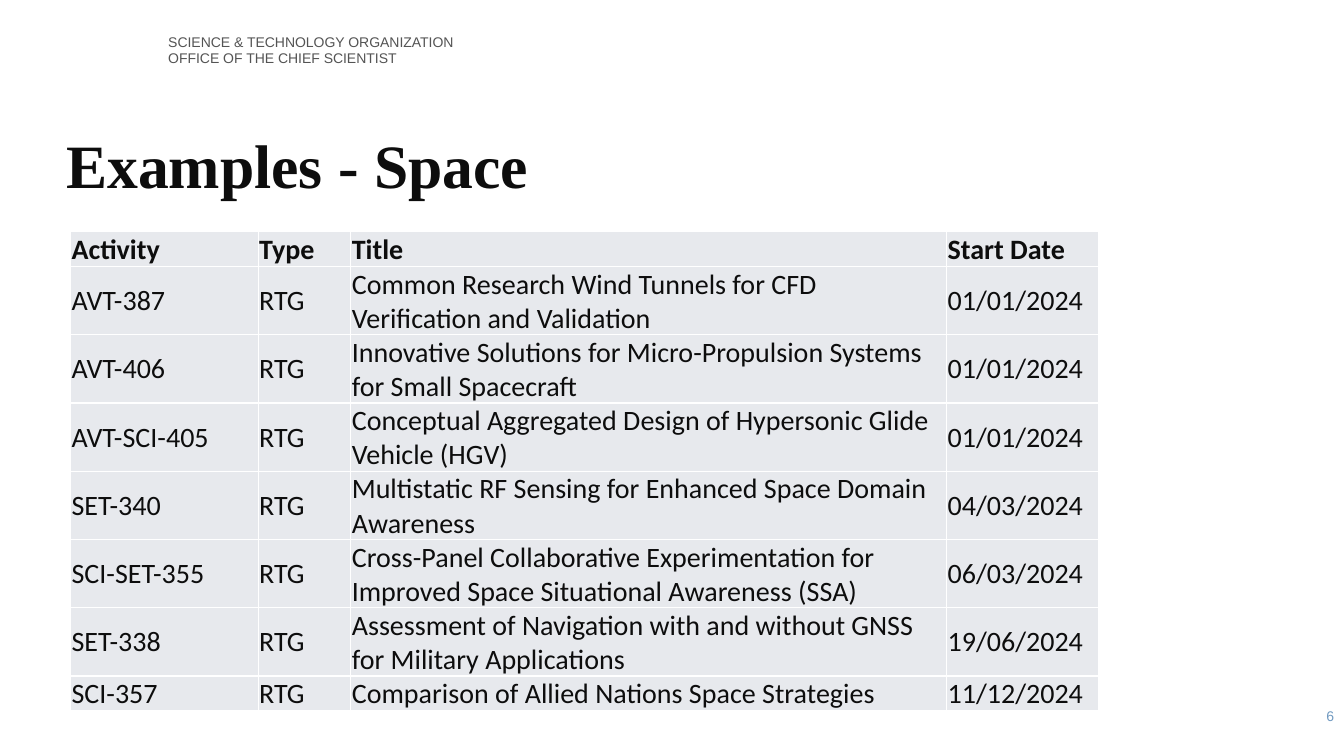
from lxml import etree
from pptx import Presentation
from pptx.dml.color import RGBColor
from pptx.enum import text
from pptx.oxml import ns
from pptx.util import Inches, Pt

INK = RGBColor(0x0D, 0x0D, 0x0D)
GREY = RGBColor(0x54, 0x54, 0x54)
BLUE = RGBColor(0x71, 0x9A, 0xC1)
CELL_FILL = RGBColor(0xE7, 0xE9, 0xED)
WHITE = RGBColor(0xFF, 0xFF, 0xFF)

COLUMN_WIDTHS = [1.86, 0.92, 5.91, 1.51]
LINE_HEIGHT = 0.33
HEADINGS = ["Activity", "Type", "Title", "Start Date"]
ACTIVITIES = [
    ("AVT-387", "Common Research Wind Tunnels for CFD Verification and Validation", "01/01/2024"),
    ("AVT-406", "Innovative Solutions for Micro-Propulsion Systems for Small Spacecraft", "01/01/2024"),
    ("AVT-SCI-405", "Conceptual Aggregated Design of Hypersonic Glide Vehicle (HGV)", "01/01/2024"),
    ("SET-340", "Multistatic RF Sensing for Enhanced Space Domain Awareness", "04/03/2024"),
    ("SCI-SET-355", "Cross-Panel Collaborative Experimentation for Improved Space Situational Awareness (SSA)",
     "06/03/2024"),
    ("SET-338", "Assessment of Navigation with and without GNSS for Military Applications", "19/06/2024"),
    ("SCI-357", "Comparison of Allied Nations Space Strategies", "11/12/2024"),
]


def add_run(paragraph, wording, font_name, size, color, bold=False):
    """Add one formatted run to a paragraph."""
    run = paragraph.add_run()
    run.text = wording
    run.font.name = font_name
    run.font.size = Pt(size)
    run.font.bold = bold
    run.font.color.rgb = color


def add_text(slide, box, lines, font_name, size, color, bold=False,
             align=text.PP_ALIGN.LEFT, spacing=1.0):
    """Add a vertically centred text box with one paragraph per line."""
    shape = slide.shapes.add_textbox(*map(Inches, box))
    frame = shape.text_frame
    frame.word_wrap = True
    frame.vertical_anchor = text.MSO_ANCHOR.MIDDLE
    for index, line in enumerate(lines):
        paragraph = frame.add_paragraph() if index else frame.paragraphs[0]
        paragraph.alignment = align
        paragraph.line_spacing = spacing
        add_run(paragraph, line, font_name, size, color, bold)


def add_borders(cell):
    """Draw a thin white line on each side of a cell."""
    properties = cell._tc.get_or_add_tcPr()
    for side in ("lnL", "lnR", "lnT", "lnB"):
        line = etree.SubElement(properties, ns.qn(f"a:{side}"), w=str(Pt(1)))
        fill = etree.SubElement(line, ns.qn("a:solidFill"))
        etree.SubElement(fill, ns.qn("a:srgbClr"), val=str(WHITE))


def fill_cell(cell, wording, bold):
    """Format a table cell and write its text."""
    cell.margin_left = cell.margin_right = cell.margin_top = Inches(0.01)
    cell.margin_bottom = 0
    cell.vertical_anchor = text.MSO_ANCHOR.MIDDLE
    add_borders(cell)
    cell.fill.solid()
    cell.fill.fore_color.rgb = CELL_FILL
    add_run(cell.text_frame.paragraphs[0], wording, "Calibri", 20, INK, bold)


def add_activity_table(slide):
    """Add the table of space activities."""
    rows = [HEADINGS] + [(code, "RTG", title, date) for code, title, date in ACTIVITIES]
    line_counts = [1] + [2] * (len(rows) - 2) + [1]
    frame = slide.shapes.add_table(
        len(rows), len(HEADINGS), Inches(0.7), Inches(2.3),
        Inches(sum(COLUMN_WIDTHS)), Inches(LINE_HEIGHT * sum(line_counts)))
    table = frame.table
    table.horz_banding = False
    for column, width in zip(table.columns, COLUMN_WIDTHS):
        column.width = Inches(width)
    for row_index, (row, count) in enumerate(zip(rows, line_counts)):
        table.rows[row_index].height = Inches(LINE_HEIGHT * count)
        for column_index, wording in enumerate(row):
            fill_cell(table.cell(row_index, column_index), wording, row_index == 0)


def main():
    """Build and save the slide."""
    presentation = Presentation()
    presentation.slide_width = Inches(13.33)
    presentation.slide_height = Inches(7.5)
    slide = presentation.slides.add_slide(presentation.slide_layouts[6])
    add_text(slide, (1.57, 0.2, 5.91, 0.59),
             ["SCIENCE & TECHNOLOGY ORGANIZATION", "OFFICE OF THE CHIEF SCIENTIST"],
             "Arial", 10, GREY)
    add_text(slide, (0.56, 1.22, 11.5, 0.91), ["Examples - Space"],
             "Times New Roman", 44, INK, bold=True, spacing=0.9)
    add_activity_table(slide)
    add_text(slide, (10.33, 6.9, 3, 0.4), ["6"], "Arial", 10, BLUE,
             align=text.PP_ALIGN.RIGHT)
    presentation.save("out.pptx")


if __name__ == "__main__":
    main()
